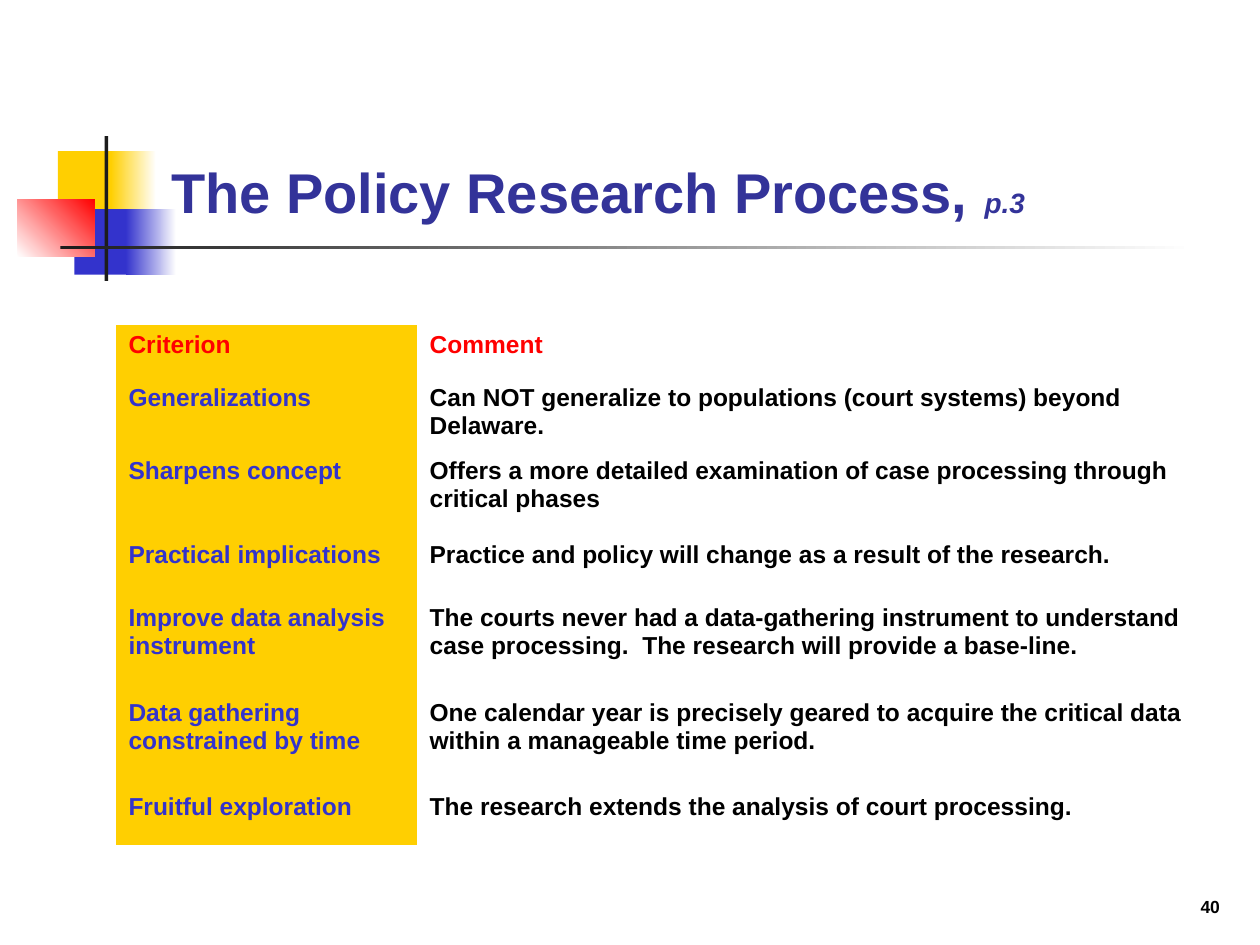
"""Build the policy research process slide with its criterion table."""
from pptx import Presentation
from pptx.dml.color import RGBColor
from pptx.enum.shapes import MSO_SHAPE
from pptx.enum.text import MSO_ANCHOR, PP_ALIGN
from pptx.oxml.ns import qn
from pptx.util import Inches, Pt

RECT = MSO_SHAPE.RECTANGLE
BOTTOM = MSO_ANCHOR.BOTTOM
LEFT, RIGHT = PP_ALIGN.LEFT, PP_ALIGN.RIGHT
FONT = "Arial"
NO_STYLE = "{2D5ABB26-0587-4C30-8999-92F81FD0307C}"
COLORS = {
    "yellow": "FFCF01", "blue": "3333CC", "red": "FF0000", "dark": "1C1C1C",
    "white": "FFFFFF", "black": "000000", "title": "333399",
}


def rgb(name):
    return RGBColor.from_string(COLORS[name])


def add_run(p, text, size, color, italic=False):
    r = p.add_run()
    r.text = text
    r.font.name = FONT
    r.font.size = Pt(size)
    r.font.bold = True
    r.font.italic = italic
    r.font.color.rgb = rgb(color)


prs = Presentation()
prs.slide_width, prs.slide_height = Inches(10), Inches(7.5)
s = prs.slides.add_slide(prs.slide_layouts[6])

ornaments = [
    (0.46, 1.2, 0.48, 0.52, ["yellow"], 0),
    (0.88, 1.2, 0.36, 0.52, ["yellow", "white"], 0),
    (0.59, 1.66, 0.46, 0.52, ["blue"], 0),
    (1, 1.66, 0.4, 0.52, ["blue", "white"], 0),
    (0.14, 1.58, 0.61, 0.46, ["white", "red"], 45),
    (0.83, 1.08, 0.03, 1.15, ["dark"], 0),
    (0.48, 1.95, 9, 0.03, ["dark", "white"], 0),
]
for x, y, w, h, colors, angle in ornaments:
    sp = s.shapes.add_shape(RECT, Inches(x), Inches(y), Inches(w), Inches(h))
    sp.shadow.inherit = False
    sp.line.fill.background()
    if len(colors) == 1:
        sp.fill.solid()
        sp.fill.fore_color.rgb = rgb(colors[0])
    else:
        sp.fill.gradient()
        sp.fill.gradient_angle = angle
        for stop, color in zip(sp.fill.gradient_stops, colors):
            stop.color.rgb = rgb(color)

texts = [
    (7.7, 6.83, 2.08, 0.5, RIGHT, [("40", 10, "black")]),
    (1.26, 0.23, 8.52, 1.6, LEFT, [
        ("The Policy Research Process, ", 32, "title"),
        ("p.3", 16, "title", True),
    ]),
]
for x, y, w, h, align, runs in texts:
    tf = s.shapes.add_textbox(Inches(x), Inches(y), Inches(w), Inches(h)).text_frame
    tf.word_wrap = True
    tf.vertical_anchor = BOTTOM
    p = tf.paragraphs[0]
    p.alignment = align
    for run in runs:
        add_run(p, *run)

rows = [
    (0.42, "Criterion", "Comment"),
    (0.58, "Generalizations",
     "Can NOT generalize to populations (court systems) beyond Delaware."),
    (0.67, "Sharpens concept",
     "Offers a more detailed examination of case processing through critical phases"),
    (0.5, "Practical implications",
     "Practice and policy will change as a result of the research."),
    (0.75, "Improve data analysis instrument",
     "The courts never had a data-gathering instrument to understand case processing.  "
     "The research will provide a base-line."),
    (0.75, "Data gathering constrained by time",
     "One calendar year is precisely geared to acquire the critical data "
     "within a manageable time period."),
    (0.46, "Fruitful exploration",
     "The research extends the analysis of court processing."),
]
table = s.shapes.add_table(len(rows), 2, Inches(0.92), Inches(2.58),
                           Inches(8.88), Inches(4.13)).table
table.first_row = table.horz_banding = False
table._tbl.tblPr.find(qn("a:tableStyleId")).text = NO_STYLE
for col, width in zip(table.columns, (2.39, 6.49)):
    col.width = Inches(width)
for i, (height, *entries) in enumerate(rows):
    table.rows[i].height = Inches(height)
    for j, text in enumerate(entries):
        cell = table.cell(i, j)
        if j == 0:
            cell.fill.solid()
            cell.fill.fore_color.rgb = rgb("yellow")
        else:
            cell.fill.background()
        p = cell.text_frame.paragraphs[0]
        p.space_before = Pt(2.8)
        add_run(p, text, 14, "red" if i == 0 else ("blue", "black")[j])

prs.save("out.pptx")
